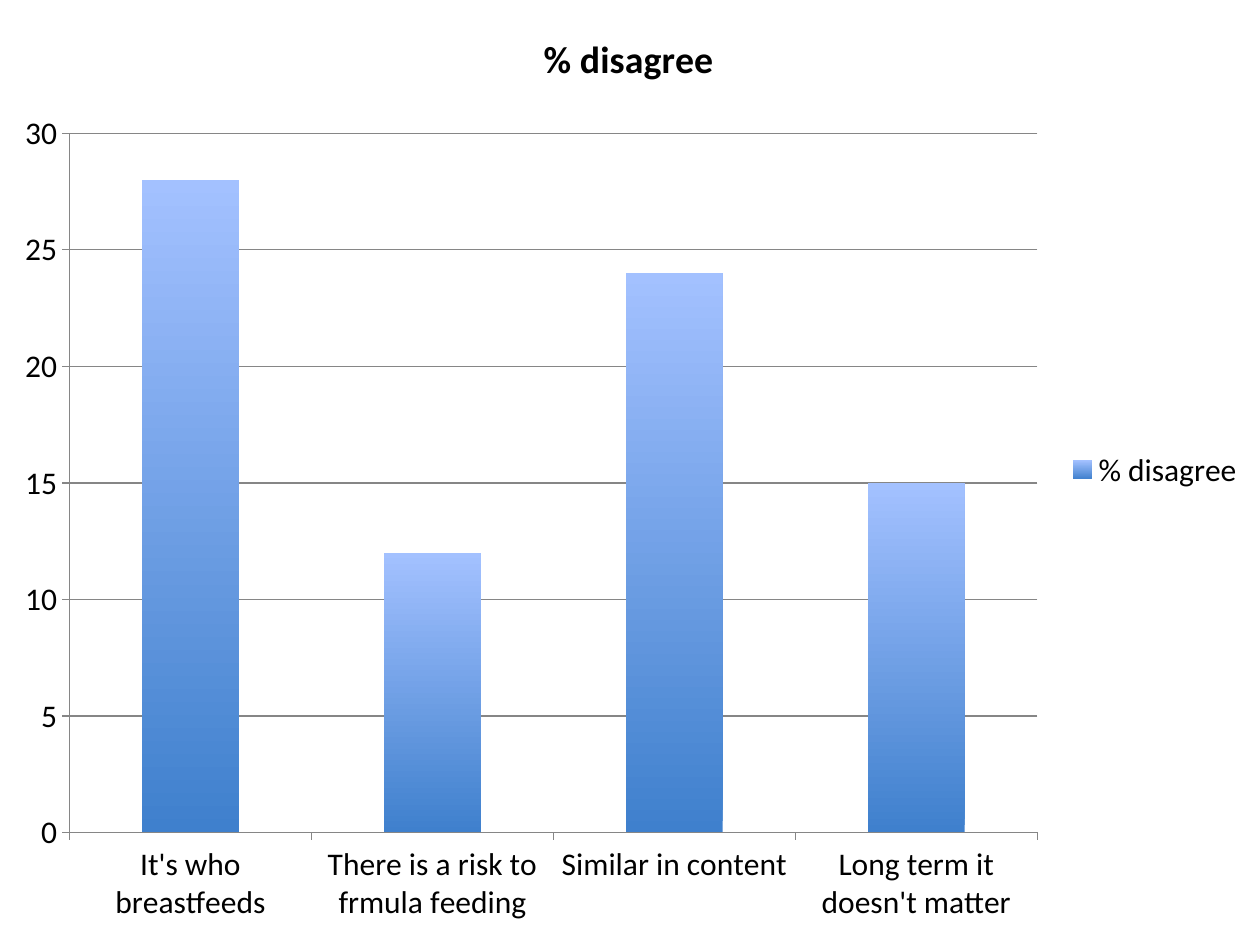
from dataclasses import dataclass

from pptx import Presentation
from pptx.chart.data import CategoryChartData
from pptx.dml.color import RGBColor as RGB
from pptx.enum.chart import XL_CHART_TYPE as ChartType
from pptx.enum.chart import XL_LEGEND_POSITION as LegendPos
from pptx.enum.chart import XL_TICK_MARK as TickMark
from pptx.util import Inches, Pt


@dataclass(frozen=True)
class Theme:
    font: str = "Calibri"
    text: RGB = RGB.from_string("000000")
    rule: RGB = RGB.from_string("868686")
    bar_bottom: RGB = RGB.from_string("3F80CD")
    bar_top: RGB = RGB.from_string("A3C1FF")
    body_size: float = 18
    title_size: float = 21.6
    rule_width: float = 0.75


THEME = Theme()
SERIES = "% disagree"
DISAGREE = {
    "It's who breastfeeds": 28,
    "There is a risk to frmula feeding": 12,
    "Similar in content": 24,
    "Long term it doesn't matter": 15,
}


def format_font(font, size=THEME.body_size, bold=False):
    font.name = THEME.font
    font.size = Pt(size)
    font.bold = bold
    font.color.rgb = THEME.text


def add_text(tf, text, **style):
    r = tf.paragraphs[0].add_run()
    r.text = text
    format_font(r.font, **style)


def format_line(line):
    line.color.rgb = THEME.rule
    line.width = Pt(THEME.rule_width)


def format_axis(axis, gridlines=False):
    axis.major_tick_mark = TickMark.OUTSIDE
    axis.minor_tick_mark = TickMark.NONE
    axis.has_major_gridlines = gridlines
    format_line(axis.format.line)
    format_font(axis.tick_labels.font)
    if gridlines:
        format_line(axis.major_gridlines.format.line)


def fill_bars(series):
    """Shade the bars from dark at the foot to light at the top."""
    series.invert_if_negative = False
    fill = series.format.fill
    fill.gradient()
    fill.gradient_angle = 90
    for stop, color in zip(fill.gradient_stops, (THEME.bar_bottom, THEME.bar_top)):
        stop.color.rgb = color


def add_column_chart(s, width, height):
    data = CategoryChartData()
    data.categories = list(DISAGREE)
    data.add_series(SERIES, list(DISAGREE.values()))
    chart = s.shapes.add_chart(
        ChartType.COLUMN_CLUSTERED, 0, 0, width, height, data).chart
    format_font(chart.font)

    chart.has_title = True
    add_text(chart.chart_title.text_frame, SERIES, size=THEME.title_size, bold=True)
    chart.chart_title.include_in_layout = False

    chart.has_legend = True
    chart.legend.position = LegendPos.RIGHT
    chart.legend.include_in_layout = False
    format_font(chart.legend.font)

    format_axis(chart.category_axis)
    format_axis(chart.value_axis, gridlines=True)
    chart.value_axis.minimum_scale = 0
    chart.value_axis.maximum_scale = 30
    chart.value_axis.major_unit = 5

    plot = chart.plots[0]
    plot.gap_width = 150
    plot.vary_by_categories = False
    fill_bars(plot.series[0])


def main():
    prs = Presentation()
    prs.slide_width, prs.slide_height = Inches(10), Inches(7.5)
    s = prs.slides.add_slide(prs.slide_layouts[6])
    add_column_chart(s, Inches(9.98), Inches(7.46))
    prs.save("out.pptx")


if __name__ == "__main__":
    main()
